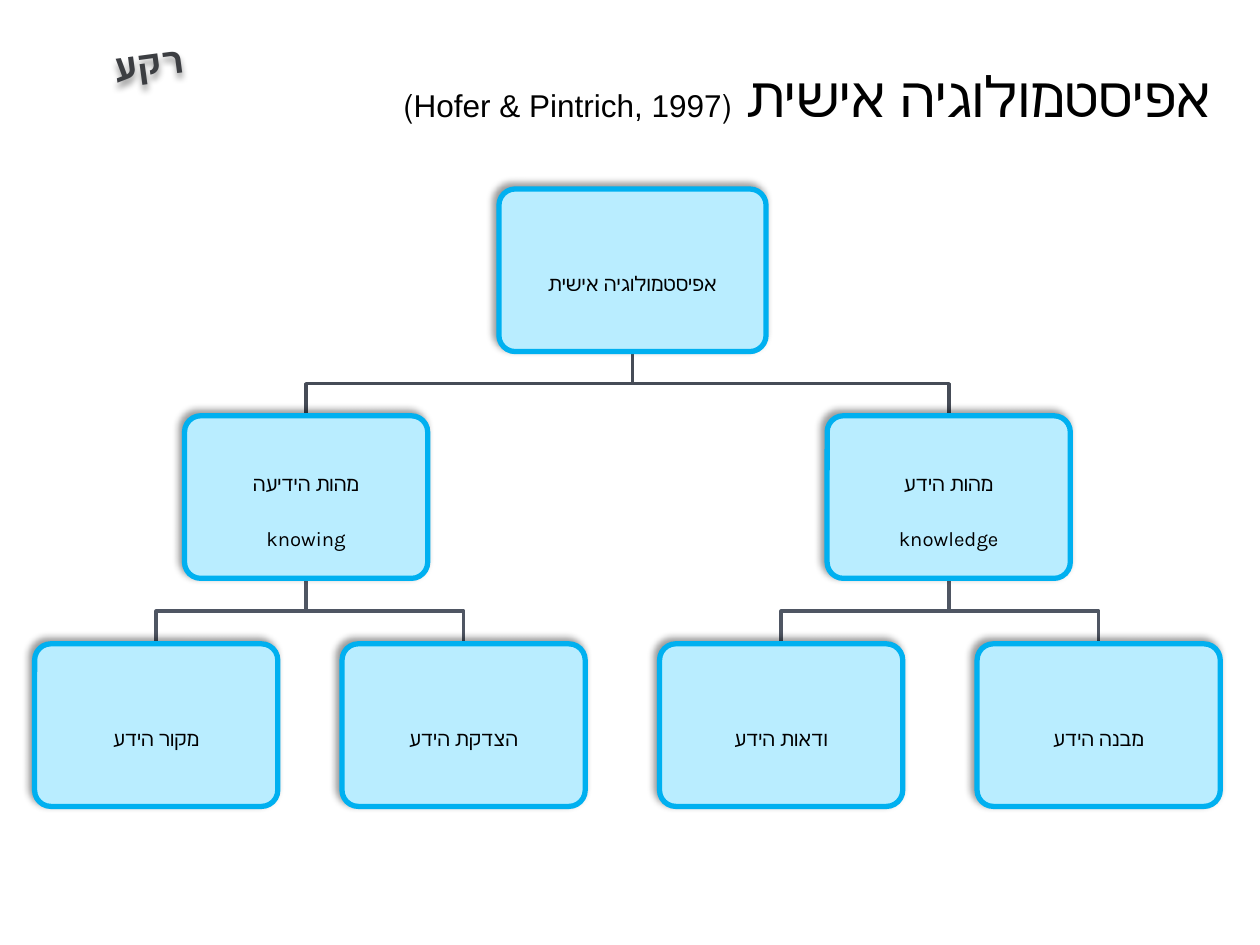
from pptx import Presentation
from pptx.dml.color import RGBColor
from pptx.enum.shapes import MSO_SHAPE
from pptx.enum.text import MSO_ANCHOR, PP_ALIGN
from pptx.oxml import parse_xml
from pptx.oxml.ns import nsdecls
from pptx.util import Inches, Pt

BLACK = RGBColor(0x00, 0x00, 0x00)
LABEL_GRAY = RGBColor(0x3C, 0x3E, 0x42)
BOX_FILL = RGBColor(0xB9, 0xED, 0xFF)
BOX_LINE = RGBColor(0x00, 0xB0, 0xF0)
UPPER_LINK = RGBColor(0x46, 0x4C, 0x57)
LOWER_LINK = RGBColor(0x4F, 0x56, 0x63)

BOX_H = 1.29
ROOT_W, NODE_W = 2.12, 1.93
LEVEL_TOPS = [1.5, 3.3, 5.11]

# Each node: centre x, lines of text, children
TREE = (5.02, ["אפיסטמולוגיה אישית"], [
    (7.53, ["מהות הידע", "knowledge"], [
        (8.72, ["מבנה הידע"], []),
        (6.2, ["ודאות הידע"], []),
    ]),
    (2.43, ["מהות הידיעה", "knowing"], [
        (3.68, ["הצדקת הידע"], []),
        (1.24, ["מקור הידע"], []),
    ]),
])


def add_shadow(sp, direction):
    sp._element.spPr.append(parse_xml(
        f'<a:effectLst {nsdecls("a")}><a:outerShdw blurRad="{Pt(4)}" dist="{Pt(3)}" '
        f'dir="{direction * 60000}" algn="ctr" rotWithShape="0"><a:srgbClr val="000000">'
        '<a:alpha val="40000"/></a:srgbClr></a:outerShdw></a:effectLst>'))


def format_run(r, size, color=BLACK, name="Arial", lowered=False):
    r.font.name = name
    r.font.size = Pt(size)
    r.font.color.rgb = color
    if lowered:
        r.font._element.set("baseline", "-25000")


def set_rtl(p, align):
    p.alignment = align
    p._p.get_or_add_pPr().set("rtl", "1")


def add_title(slide):
    title = slide.shapes.title
    title.left, title.top = Inches(0.27), Inches(0.28)
    title.width, title.height = Inches(9.45), Inches(0.95)
    title.text_frame.vertical_anchor = MSO_ANCHOR.MIDDLE
    p = title.text_frame.paragraphs[0]
    set_rtl(p, PP_ALIGN.RIGHT)
    for text, size in [("אפיסטמולוגיה אישית ", 32), ("(Hofer & Pintrich, 1997)", 18)]:
        r = p.add_run()
        r.text = text
        format_run(r, size)


def add_box(slide, x, top, width, lines):
    sp = slide.shapes.add_shape(MSO_SHAPE.ROUNDED_RECTANGLE, Inches(x - width / 2),
                                Inches(top), Inches(width), Inches(BOX_H))
    sp.adjustments[0] = 0.1
    sp.fill.solid()
    sp.fill.fore_color.rgb = BOX_FILL
    sp.line.color.rgb = BOX_LINE
    sp.line.width = Pt(3)
    add_shadow(sp, 225)

    tf = sp.text_frame
    tf.word_wrap = True
    tf.vertical_anchor = MSO_ANCHOR.MIDDLE
    tf.margin_left = tf.margin_right = tf.margin_top = tf.margin_bottom = Inches(0.1)
    tf.text = "\n".join(lines)
    for p, name in zip(tf.paragraphs, ["Arial", "Karla"]):
        set_rtl(p, PP_ALIGN.CENTER)
        p.line_spacing = 0.9
        p.space_after = Pt(7)
        format_run(p.runs[0], 20, name=name, lowered=True)


def add_link(slide, x1, y1, x2, y2, color):
    middle = (y1 + y2) / 2
    builder = slide.shapes.build_freeform(Inches(x1), Inches(y1))
    builder.add_line_segments([(Inches(x), Inches(y)) for x, y in
                               [(x1, middle), (x2, middle), (x2, y2)]], close=False)
    sp = builder.convert_to_shape()
    sp.fill.background()
    sp.line.color.rgb = color
    sp.line.width = Pt(2)
    sp.shadow.inherit = False


def add_tree(slide, node, level=0):
    x, lines, children = node
    top = LEVEL_TOPS[level]
    for child in children:
        add_link(slide, x, top + BOX_H, child[0], LEVEL_TOPS[level + 1],
                 LOWER_LINK if level else UPPER_LINK)
        add_tree(slide, child, level + 1)
    add_box(slide, x, top, NODE_W if level else ROOT_W, lines)


def add_label(slide):
    sp = slide.shapes.add_textbox(Inches(0.38), Inches(-0.06), Inches(1.54), Inches(0.75))
    sp.rotation = 352.2
    add_shadow(sp, 90)
    tf = sp.text_frame
    tf.word_wrap = False
    tf.text = "רקע"
    p = tf.paragraphs[0]
    p.alignment = PP_ALIGN.CENTER
    format_run(p.runs[0], 36, LABEL_GRAY, lowered=True)
    p.runs[0].font.bold = True


def main():
    prs = Presentation()
    prs.slide_width, prs.slide_height = Inches(10), Inches(7.5)
    slide = prs.slides.add_slide(prs.slide_layouts[5])
    add_title(slide)
    add_tree(slide, TREE)
    add_label(slide)
    prs.save("out.pptx")


if __name__ == "__main__":
    main()
